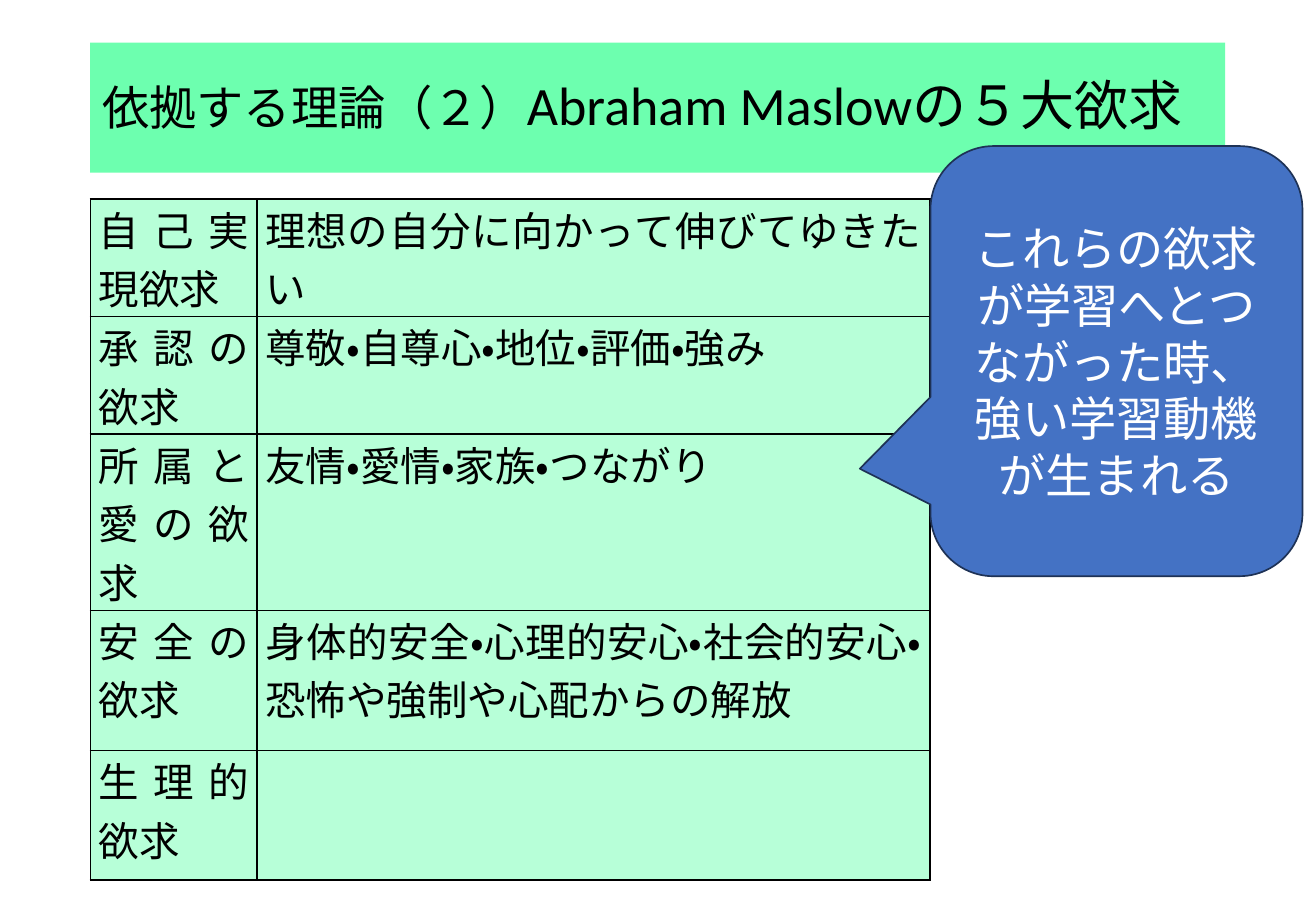
from dataclasses import dataclass

from lxml.etree import SubElement
from pptx import Presentation
from pptx.dml.color import RGBColor
from pptx.enum.lang import MSO_LANGUAGE_ID as Language
from pptx.enum.shapes import MSO_SHAPE as Shape
from pptx.enum.text import MSO_ANCHOR as Anchor, MSO_AUTO_SIZE as AutoSize, PP_ALIGN as Align
from pptx.oxml.ns import qn
from pptx.util import Pt


@dataclass(frozen=True)
class Theme:
    title_fill: str = "6DFFAF"
    cell_fill: str = "B7FFD8"
    callout_fill: str = "4472C4"
    callout_line: str = "1E3256"
    dark: str = "000000"
    light: str = "FFFFFF"
    heading_font: str = "Calibri"
    table_font: str = "Cambria"
    title_size: int = 32
    body_size: int = 28
    table_size: int = 24
    line_width: int = 1


def set_attributes(target, values):
    for name, value in values.items():
        setattr(target, name, value)


class SlideBuilder:
    def __init__(self, presentation, theme):
        self.theme = theme
        self.slide = presentation.slides.add_slide(presentation.slide_layouts[5])

    def fill(self, target, color):
        target.fill.solid()
        target.fill.fore_color.rgb = RGBColor.from_string(color)

    def add_run(self, paragraph, text, font_name, size, color):
        run = paragraph.add_run()
        run.text = text
        set_attributes(run.font, {
            "name": font_name, "size": Pt(size), "language_id": Language.JAPANESE,
        })
        run.font.color.rgb = RGBColor.from_string(color)

    def add_title(self, bounds, parts):
        title = self.slide.shapes.title
        set_attributes(title, dict(zip(("left", "top", "width", "height"), map(Pt, bounds))))
        self.fill(title, self.theme.title_fill)
        set_attributes(title.text_frame, {
            "vertical_anchor": Anchor.MIDDLE, "auto_size": AutoSize.NONE, "word_wrap": True,
        })
        paragraph = title.text_frame.paragraphs[0]
        set_attributes(paragraph, {"alignment": Align.LEFT, "line_spacing": 0.9})
        for text, size in parts:
            self.add_run(paragraph, text, self.theme.heading_font, size, self.theme.dark)

    def add_borders(self, cell):
        properties = cell._tc.get_or_add_tcPr()
        for position, side in enumerate(("lnL", "lnR", "lnT", "lnB")):
            line = SubElement(properties, qn(f"a:{side}"), w=str(Pt(self.theme.line_width)))
            solid = SubElement(line, qn("a:solidFill"))
            SubElement(solid, qn("a:srgbClr"), val=self.theme.dark)
            properties.insert(position, line)

    def add_table(self, left, top, column_widths, row_heights, rows):
        frame = self.slide.shapes.add_table(
            len(rows), len(column_widths), Pt(left), Pt(top),
            Pt(sum(column_widths)), Pt(sum(row_heights)))
        table = frame.table
        set_attributes(table, {"first_row": False, "horz_banding": False})
        for column, width in zip(table.columns, column_widths):
            column.width = Pt(width)
        for row, height, texts in zip(table.rows, row_heights, rows):
            row.height = Pt(height)
            for cell, text in zip(row.cells, texts):
                set_attributes(cell, {
                    "margin_left": Pt(5), "margin_right": Pt(5),
                    "margin_top": 0, "margin_bottom": 0,
                })
                self.fill(cell, self.theme.cell_fill)
                self.add_borders(cell)
                if text:
                    paragraph = cell.text_frame.paragraphs[0]
                    paragraph.alignment = Align.JUSTIFY
                    self.add_run(paragraph, text, self.theme.table_font,
                                 self.theme.table_size, self.theme.dark)

    def add_callout(self, bounds, adjustments, text):
        callout = self.slide.shapes.add_shape(
            Shape.ROUNDED_RECTANGULAR_CALLOUT, *map(Pt, bounds))
        for index, value in enumerate(adjustments):
            callout.adjustments[index] = value
        callout.shadow.inherit = False
        self.fill(callout, self.theme.callout_fill)
        callout.line.width = Pt(self.theme.line_width)
        callout.line.color.rgb = RGBColor.from_string(self.theme.callout_line)
        set_attributes(callout.text_frame, {"word_wrap": True, "vertical_anchor": Anchor.MIDDLE})
        paragraph = callout.text_frame.paragraphs[0]
        paragraph.alignment = Align.CENTER
        self.add_run(paragraph, text, self.theme.heading_font,
                     self.theme.body_size, self.theme.light)


def main():
    theme = Theme()
    presentation = Presentation()
    set_attributes(presentation, {"slide_width": Pt(780), "slide_height": Pt(540)})
    builder = SlideBuilder(presentation, theme)
    builder.add_title((53.5, 25.3, 672.7, 77), [
        ("依拠する理論（２）", theme.body_size),
        ("Abraham Maslowの５大欲求", theme.title_size),
    ])
    needs = [
        ("自己実現欲求", "理想の自分に向かって伸びてゆきたい"),
        ("承認の欲求", "尊敬・自尊心・地位・評価・強み"),
        ("所属と愛の欲求", "友情・愛情・家族・つながり"),
        ("安全の欲求", "身体的安全・心理的安心・社会的安心・恐怖や強制や心配からの解放"),
        ("生理的欲求", ""),
    ]
    builder.add_table(53.5, 118, (98.9, 399), (57.6, 57.6, 91.4, 83, 77), needs)
    builder.add_callout((551.5, 86.6, 220.5, 255), (-0.69, 0.25, 0.17),
                        "これらの欲求が学習へとつながった時、強い学習動機が生まれる")
    presentation.save("out.pptx")


if __name__ == "__main__":
    main()
